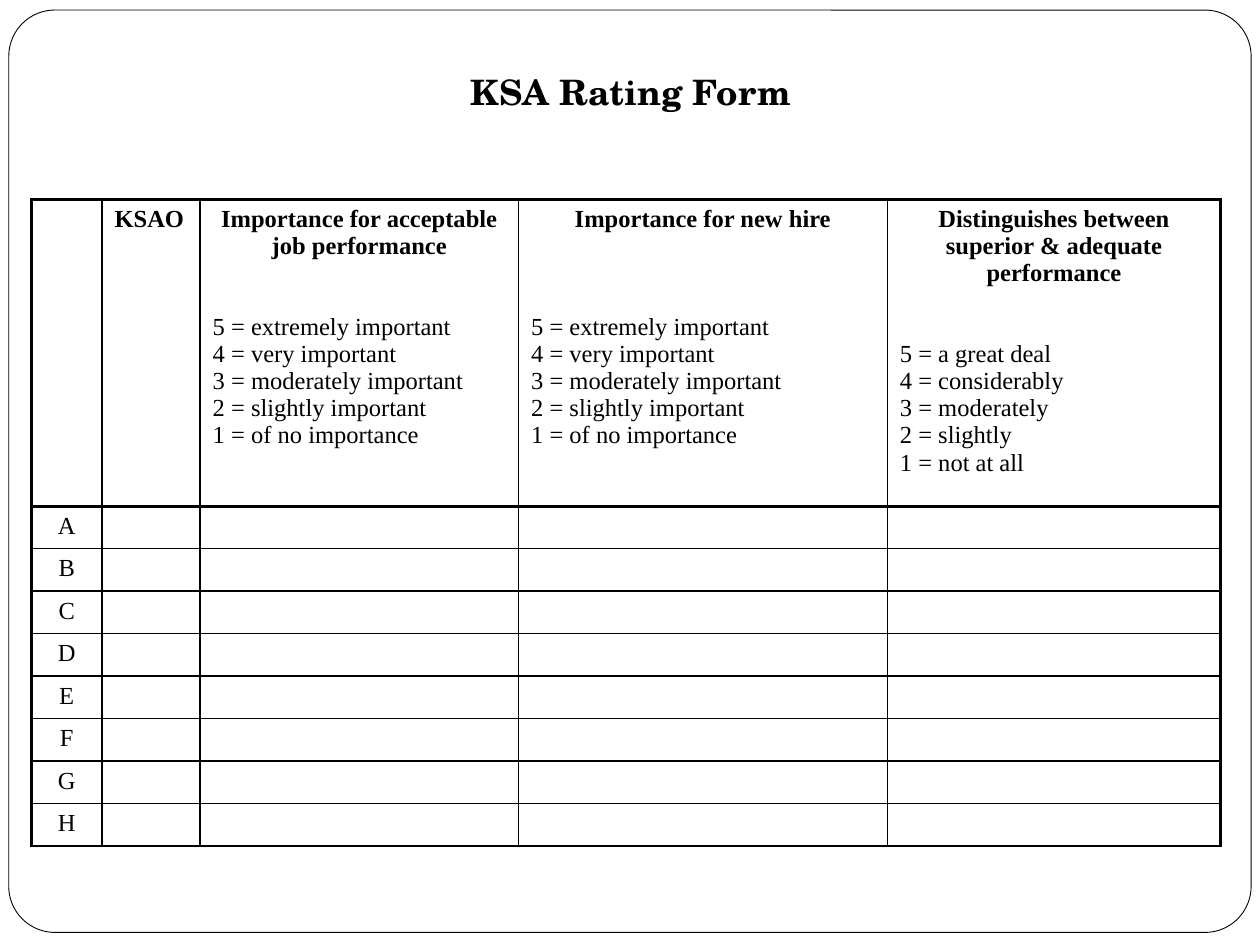
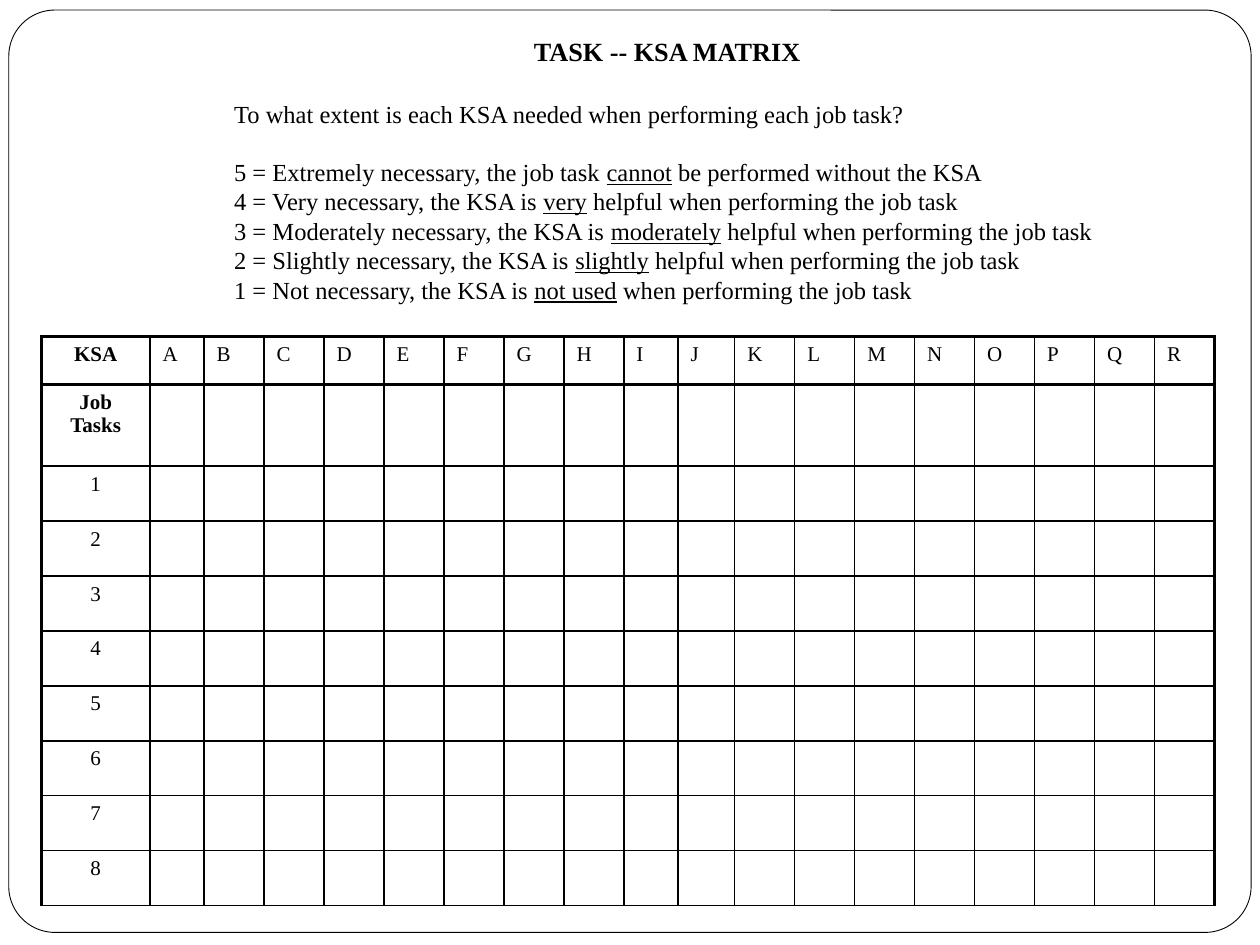
from lxml import etree
from pptx import Presentation
from pptx import util as u
from pptx.dml.color import RGBColor
from pptx.enum import shapes, text
from pptx.oxml.ns import qn

COLORS = {"ink": "000000", "paper": "FFFFFF"}
SERIF, SCHOOL = "Times New Roman", "TeX Gyre Schola"
CENTER = text.PP_ALIGN.CENTER
SLIDE_W, SLIDE_H = u.Inches(10), u.Inches(7.5)
GRID_COLS, GRID_ROWS = 100, 75
LEVELS = ["extremely important", "very important", "moderately important",
          "slightly important", "of no importance"]
DEGREES = ["a great deal", "considerably", "moderately", "slightly", "not at all"]
RATINGS = [
    ("Importance for acceptable job performance", LEVELS, 31),
    ("Importance for new hire", LEVELS, 46.5),
    ("Distinguishes between superior & adequate performance", DEGREES, 31),
]
NEEDS = [
    "Extremely necessary, the job task _cannot_ be performed without the KSA",
    "Very necessary, the KSA is _very_ helpful when performing the job task",
    "Moderately necessary, the KSA is _moderately_ helpful when performing the job task",
    "Slightly necessary, the KSA is _slightly_ helpful when performing the job task",
    "Not necessary, the KSA is _not used_ when performing the job task",
]


def rgb(name):
    """Return the named colour."""
    return RGBColor.from_string(COLORS[name])


def place(box):
    """Turn a box in grid columns and rows into slide lengths."""
    x, y, w, h = box
    col, row = SLIDE_W / GRID_COLS, SLIDE_H / GRID_ROWS
    return int(x * col), int(y * row), int(w * col), int(h * row)


def apply(obj, values):
    """Set attributes from a dict of format values."""
    for name, value in values.items():
        setattr(obj, name, value)


def scale(items):
    """Label the steps of a rating scale from the highest down to 1."""
    return [f"{len(items) - i} = {item}" for i, item in enumerate(items)]


def write(tf, paras, size):
    """Write (text, font format, paragraph format) lines; underscores underline."""
    for i, (line, font, layout) in enumerate(paras):
        p = tf.paragraphs[0] if i == 0 else tf.add_paragraph()
        apply(p, layout)
        for j, part in enumerate(line.split("_")):
            r = p.add_run()
            r.text = part
            apply(r.font, {"name": SERIF, "size": u.Pt(size), "bold": False,
                           "underline": j % 2 == 1, **font})
            r.font.color.rgb = rgb("ink")


def add_text(s, box, paras, size, anchor):
    """Place a wrapped text box."""
    tf = s.shapes.add_textbox(*place(box)).text_frame
    apply(tf, {"word_wrap": True, "vertical_anchor": anchor})
    write(tf, paras, size)


def add_frame(s):
    """Draw the rounded frame that every slide has."""
    sp = s.shapes.add_shape(shapes.MSO_SHAPE.ROUNDED_RECTANGLE, *place((0.7, 0.8, 98.6, 73.2)))
    sp.adjustments[0] = 0.05
    sp.shadow.inherit = False
    sp.fill.solid()
    sp.fill.fore_color.rgb = rgb("paper")
    sp.line.color.rgb = rgb("ink")
    sp.line.width = u.Pt(0.5)


def set_borders(cell, widths):
    """Draw the four cell borders, with widths in points by side."""
    tcPr = cell._tc.get_or_add_tcPr()
    for side in "LRTB":
        ln = etree.SubElement(tcPr, qn(f"a:ln{side}"), w=str(u.Pt(widths[side])))
        fill = etree.SubElement(ln, qn("a:solidFill"))
        etree.SubElement(fill, qn("a:srgbClr"), val=COLORS["ink"])
    cell.fill.background()


def add_form(s, box, cols, rows, cells, size):
    """Place a ruled table; cols and rows are shares of the box."""
    x, y, w, h = place(box)
    table = s.shapes.add_table(len(rows), len(cols), x, y, w, h).table
    apply(table, {"first_row": False, "horz_banding": False})
    for col, share in zip(table.columns, cols):
        col.width = int(w * share / sum(cols))
    for row, share in zip(table.rows, rows):
        row.height = int(h * share / sum(rows))
    for r in range(len(rows)):
        for c in range(len(cols)):
            cell = table.cell(r, c)
            set_borders(cell, {"L": 2 if c == 0 else 1,
                               "R": 2 if c == len(cols) - 1 else 1,
                               "T": 2 if r < 2 else 1,
                               "B": 2 if r == 0 else 1})
            if (r, c) in cells:
                write(cell.text_frame, cells[r, c], size)
            else:
                end = cell.text_frame.paragraphs[0]._p.get_or_add_endParaRPr()
                end.set("sz", str(size * 100))


def rating_head(title, items, gap):
    """Return the lines of a rating column's head."""
    steps = [(step, {}, {"space_before": u.Pt(gap if i == 0 else 0)})
             for i, step in enumerate(scale(items))]
    return [(title, {"bold": True}, {"alignment": CENTER})] + steps


def rating_slide(prs):
    """Build the KSA rating form."""
    s = prs.slides.add_slide(prs.slide_layouts[6])
    add_frame(s)
    letters = "ABCDEFGH"
    cells = {(0, 1): [("KSAO", {"bold": True}, {})]}
    cells.update({(0, c): rating_head(*rating) for c, rating in enumerate(RATINGS, 2)})
    cells.update({(r, 0): [(letter, {}, {"alignment": CENTER})]
                  for r, letter in enumerate(letters, 1)})
    add_form(s, (2.5, 15.8, 94.4, 51), [5.6, 7.8, 25.3, 29.3, 26.5],
             [24.4] + [3.33] * len(letters), cells, 14)
    title = ("KSA Rating Form", {"name": SCHOOL, "bold": True}, {"alignment": CENTER})
    add_text(s, (13.3, 0, 73.5, 9.4), [title], 20, text.MSO_ANCHOR.BOTTOM)


def matrix_slide(prs):
    """Build the task by KSA matrix."""
    s = prs.slides.add_slide(prs.slide_layouts[6])
    add_frame(s)
    pitch = {"line_spacing": u.Pt(16.85)}
    question = "To what extent is each KSA needed when performing each job task?"
    paras = [("TASK -- KSA MATRIX", {"size": u.Pt(15), "bold": True},
              {"alignment": CENTER, **pitch}),
             (question, {}, {"space_before": u.Pt(18), **pitch})]
    paras += [(step, {}, {"space_before": u.Pt(16.5 if i == 0 else 0), **pitch})
              for i, step in enumerate(scale(NEEDS))]
    add_text(s, (17.6, 2.5, 70.7, 22.4), paras, 14, text.MSO_ANCHOR.TOP)

    letters, tasks = "ABCDEFGHIJKLMNOPQR", 8
    narrow = {"A": 4.3, "I": 4.3, "J": 4.5}
    heads = ["KSA", "Job Tasks"] + [str(n + 1) for n in range(tasks)]
    cells = {(r, 0): [(head, {"bold": r < 2}, {"alignment": CENTER})]
             for r, head in enumerate(heads)}
    cells.update({(0, c): [(letter, {}, {})] for c, letter in enumerate(letters, 1)})
    add_form(s, (3.3, 26.7, 93.1, 45.2), [8.6] + [narrow.get(k, 4.76) for k in letters],
             [3.8, 6.5] + [4.36] * tasks, cells, 12)


def main():
    """Build and save the presentation."""
    prs = Presentation()
    apply(prs, {"slide_width": SLIDE_W, "slide_height": SLIDE_H})
    rating_slide(prs)
    matrix_slide(prs)
    prs.save("out.pptx")


if __name__ == "__main__":
    main()
